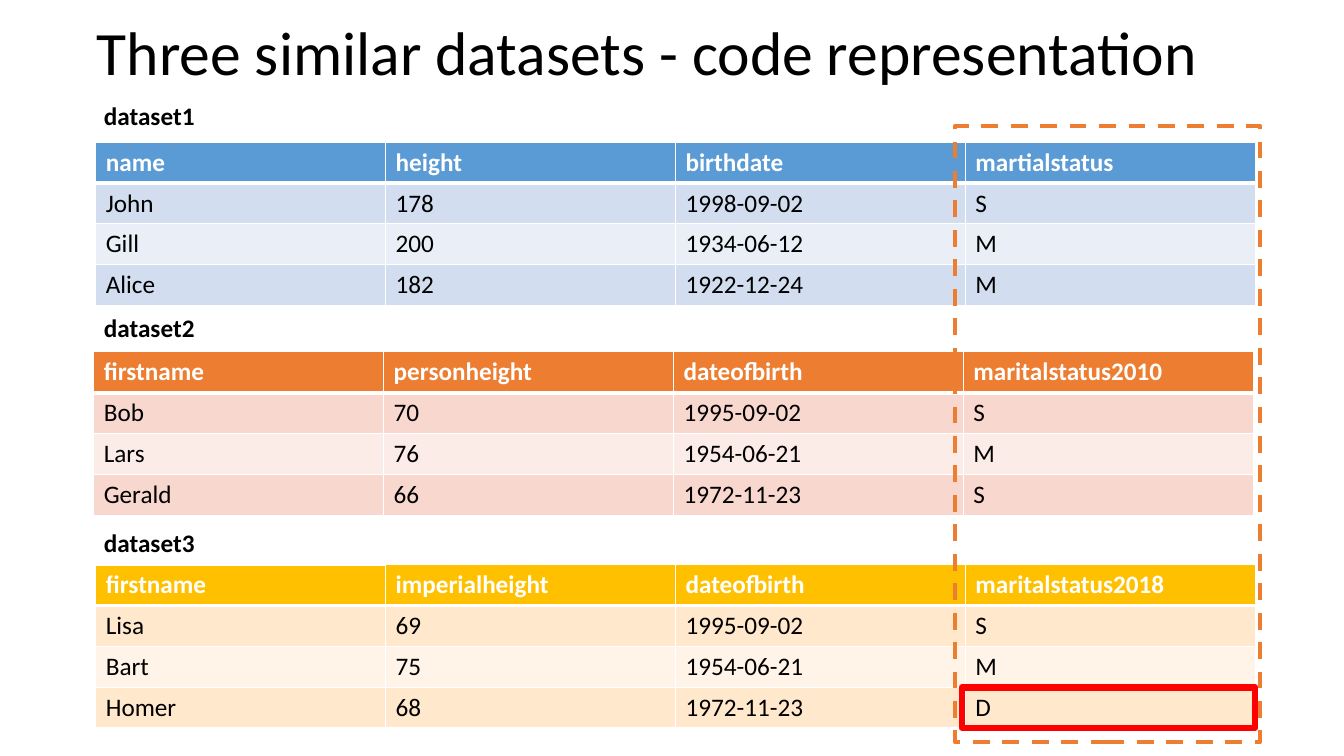
import lxml.etree
import pptx
import pptx.dml.color
import pptx.enum.dml
import pptx.enum.shapes
import pptx.enum.text
import pptx.oxml
import pptx.oxml.ns
import pptx.util

SHAPE = pptx.enum.shapes.MSO_SHAPE
DASH = pptx.enum.dml.MSO_LINE
TEXT = pptx.enum.text


def color(code):
    return pptx.dml.color.RGBColor.from_string(code)


class Deck:
    FONT = "Calibri"
    BLACK, WHITE = "000000", "FFFFFF"
    SCALE = 9144  # 100 px to the inch

    def __init__(self, wide, high):
        self.file = pptx.Presentation()
        self.file.slide_width = self.px(wide)
        self.file.slide_height = self.px(high)
        self.slide = self.file.slides.add_slide(self.file.slide_layouts[5])

    def px(self, count):
        return pptx.util.Emu(count * self.SCALE)

    def box(self, *sides):
        return [self.px(side) for side in sides]

    def run(self, para, text, size, code, bold=False):
        run = para.add_run()
        run.text = text
        run.font.name = self.FONT
        run.font.size = pptx.util.Pt(size)
        run.font.bold = bold
        run.font.color.rgb = color(code)

    def title(self, text, *sides):
        shape = self.slide.shapes.title
        shape.left, shape.top, shape.width, shape.height = self.box(*sides)
        frame = shape.text_frame
        frame.auto_size = TEXT.MSO_AUTO_SIZE.NONE
        frame.vertical_anchor = TEXT.MSO_ANCHOR.MIDDLE
        para = frame.paragraphs[0]
        para.alignment = TEXT.PP_ALIGN.LEFT
        para.line_spacing = 0.9
        self.run(para, text, 44, self.BLACK)

    def edge(self, cell, side, points):
        # Cell borders have no public method
        props = cell._tc.get_or_add_tcPr()
        name = pptx.oxml.ns.qn("a:ln" + side)
        line = lxml.etree.SubElement(props, name, w=str(pptx.util.Pt(points)))
        fill = lxml.etree.SubElement(line, pptx.oxml.ns.qn("a:solidFill"))
        lxml.etree.SubElement(fill, pptx.oxml.ns.qn("a:srgbClr"), val=self.WHITE)

    def table(self, rows, fills, head, *sides):
        """Row 0 takes fills[0]; the rows below alternate fills[1] and fills[2]."""
        frame = self.slide.shapes.add_table(len(rows), len(rows[0]), *self.box(*sides))
        table = frame.table
        table.first_row = table.horz_banding = False
        for i, row in enumerate(rows):
            fill = fills[0] if i == 0 else fills[2 - i % 2]
            for j, text in enumerate(row):
                cell = table.cell(i, j)
                for side in "LRTB":
                    heavy = (i, side) in ((0, "B"), (1, "T"))
                    self.edge(cell, side, 3 if heavy else 1)
                if fill:
                    cell.fill.solid()
                    cell.fill.fore_color.rgb = color(fill)
                else:
                    cell.fill.background()
                para = cell.text_frame.paragraphs[0]
                self.run(para, text, 18, self.BLACK if i else head, i == 0)

    def frame(self, code, points, dash, *sides):
        shape = self.slide.shapes.add_shape(SHAPE.RECTANGLE, *self.box(*sides))
        shape.shadow.inherit = False
        shape.fill.background()
        shape.line.color.rgb = color(code)
        shape.line.width = pptx.util.Pt(points)
        shape.line.dash_style = dash


# Label top, table left and top, fills, rows
SETS = [
    (96, 95, 141, ("5B9BD5", "D2DEEF", "EAEFF7"), [
        ("name", "height", "birthdate", "martialstatus"),
        ("John", "178", "1998-09-02", "S"),
        ("Gill", "200", "1934-06-12", "M"),
        ("Alice", "182", "1922-12-24", "M")]),
    (306, 93, 349, ("ED7D31", "F8D7CE", "FCECE8"), [
        ("firstname", "personheight", "dateofbirth", "maritalstatus2010"),
        ("Bob", "70", "1995-09-02", "S"),
        ("Lars", "76", "1954-06-21", "M"),
        ("Gerald", "66", "1972-11-23", "S")]),
    (519, 95, 560, ("FFC000", "FFE8CC", "FFF4E7"), [
        ("firstname", "imperialheight", "dateofbirth", "maritalstatus2018"),
        ("Lisa", "69", "1995-09-02", "S"),
        ("Bart", "75", "1954-06-21", "M"),
        ("Homer", "68", "1972-11-23", "D")]),
]


def main():
    deck = Deck(1333, 750)
    deck.title("Three similar datasets - code representation", 86, -17, 1150, 145)

    # Datasets with their labels
    for i, (high, left, top, fills, rows) in enumerate(SETS, 1):
        deck.table(rows, fills, deck.WHITE, left, top, 1150, 162)
        deck.table([(f"dataset{i}",)], (None,), deck.BLACK, 93, high, 288, 41)

    # Marks around the odd value and the status column
    deck.frame("FF0000", 4.5, DASH.SOLID, 954, 682, 291, 40)
    deck.frame("ED7D31", 3, DASH.DASH, 947, 125, 303, 611)

    deck.file.save("out.pptx")


if __name__ == "__main__":
    main()
